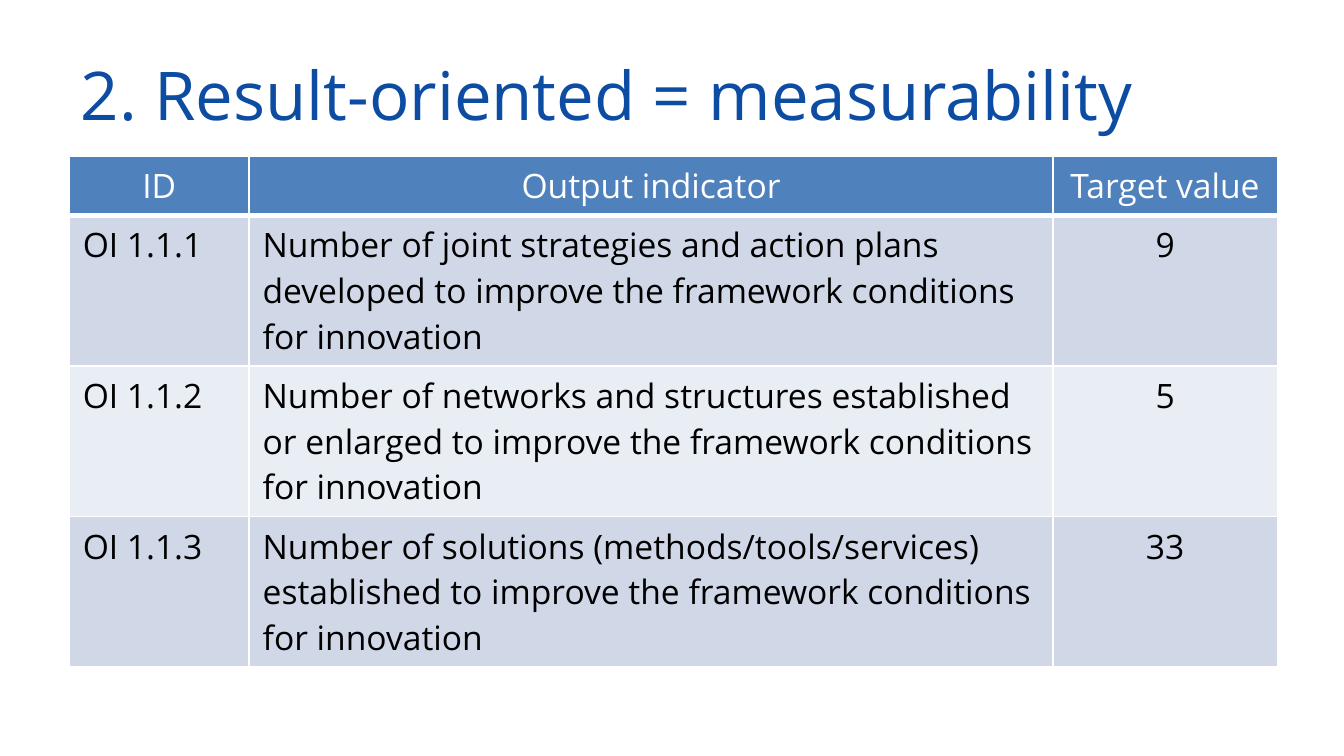
"""Build a slide with a table of output indicators and their target values."""
from dataclasses import dataclass

from lxml.etree import SubElement
from pptx import Presentation
from pptx.dml.color import RGBColor
from pptx.enum.text import MSO_ANCHOR, PP_ALIGN
from pptx.oxml.ns import qn
from pptx.util import Cm, Pt

FONT = "Open Sans"
WHITE, BLACK, TITLE_BLUE = "FFFFFF", "000000", "0C4CA3"
HEADER_FILL = "4F81BD"
BAND_FILLS = ("D0D8E8", "E9EDF4")
COLUMN_WIDTHS = (3.4, 15.19, 4.24)
ROW_HEIGHT = 1.04
HEADINGS = ("ID", "Output indicator", "Target value")


@dataclass
class Indicator:
    code: str
    text: str
    target: str


@dataclass
class CellStyle:
    fill: str
    color: str
    bottom: float
    aligns: tuple


INDICATORS = (
    Indicator("OI 1.1.1", "Number of joint strategies and action plans developed "
              "to improve the framework conditions for innovation", "9"),
    Indicator("OI 1.1.2", "Number of networks and structures established or enlarged "
              "to improve the framework conditions for innovation", "5"),
    Indicator("OI 1.1.3", "Number of solutions (methods/tools/services) established "
              "to improve the framework conditions for innovation", "33"),
)


def rgb(value: str) -> RGBColor:
    return RGBColor.from_string(value)


def write(tf, text: str, size: float, color: str, align: PP_ALIGN) -> None:
    p = tf.paragraphs[0]
    p.alignment = align
    r = p.add_run()
    r.text = text
    for name, value in {"name": FONT, "size": Pt(size), "bold": False}.items():
        setattr(r.font, name, value)
    r.font.color.rgb = rgb(color)


def add_borders(cell, bottom: float) -> None:
    tc_pr = cell._tc.get_or_add_tcPr()
    for side, width in {"L": 1, "R": 1, "T": 1, "B": bottom}.items():
        ln = SubElement(tc_pr, qn(f"a:ln{side}"), w=str(Pt(width)))
        SubElement(SubElement(ln, qn("a:solidFill")), qn("a:srgbClr"), val=WHITE)


def fill_row(table, index: int, texts: tuple, style: CellStyle) -> None:
    table.rows[index].height = Cm(ROW_HEIGHT)
    for cell, text, align in zip(table.rows[index].cells, texts, style.aligns):
        add_borders(cell, style.bottom)
        cell.fill.solid()
        cell.fill.fore_color.rgb = rgb(style.fill)
        write(cell.text_frame, text, 18, style.color, align)


def add_title(s, text: str) -> None:
    sp = s.shapes.title
    box = {"left": 1.27, "top": 0.58, "width": 22.86, "height": 2.39}
    for name, value in box.items():
        setattr(sp, name, Cm(value))
    sp.text_frame.vertical_anchor = MSO_ANCHOR.MIDDLE
    write(sp.text_frame, text, 36, TITLE_BLUE, PP_ALIGN.LEFT)


def add_indicator_table(s) -> None:
    rows = len(INDICATORS) + 1
    table = s.shapes.add_table(rows, len(HEADINGS), Cm(1.31), Cm(2.95),
                               Cm(sum(COLUMN_WIDTHS)), Cm(ROW_HEIGHT * rows)).table
    for column, width in zip(table.columns, COLUMN_WIDTHS):
        column.width = Cm(width)
    fill_row(table, 0, HEADINGS,
             CellStyle(HEADER_FILL, WHITE, 3, (PP_ALIGN.CENTER,) * 3))
    aligns = (PP_ALIGN.LEFT, PP_ALIGN.LEFT, PP_ALIGN.CENTER)
    for i, item in enumerate(INDICATORS):
        style = CellStyle(BAND_FILLS[i % 2], BLACK, 1, aligns)
        fill_row(table, i + 1, (item.code, item.text, item.target), style)


def main() -> None:
    prs = Presentation()
    prs.slide_width, prs.slide_height = Cm(25.4), Cm(14.29)
    s = prs.slides.add_slide(prs.slide_layouts[5])
    add_title(s, "2. Result-oriented = measurability")
    add_indicator_table(s)
    prs.save("out.pptx")


if __name__ == "__main__":
    main()
